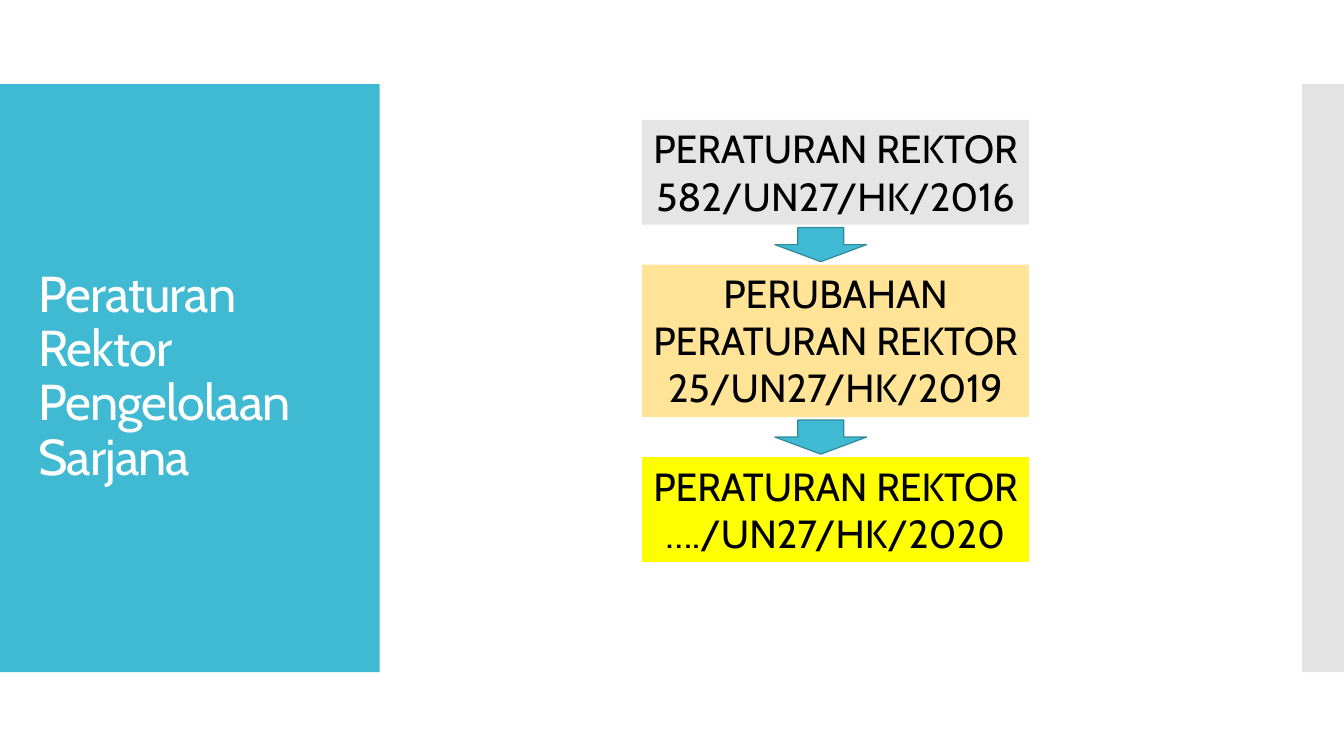
from pptx import Presentation
from pptx.dml.color import RGBColor
from pptx.enum.shapes import MSO_SHAPE
from pptx.enum.text import MSO_ANCHOR, PP_ALIGN
from pptx.util import Cm, Pt

RECT, ARROW = MSO_SHAPE.RECTANGLE, MSO_SHAPE.DOWN_ARROW
MIDDLE, TOP = MSO_ANCHOR.MIDDLE, MSO_ANCHOR.TOP
LEFT, CENTER = PP_ALIGN.LEFT, PP_ALIGN.CENTER

TITLE = "Peraturan Rektor Pengelolaan Sarjana"
RULES = [
    ("PERATURAN REKTOR 582/UN27/HK/2016", "E5E5E5", 2.64),
    ("PERUBAHAN PERATURAN REKTOR 25/UN27/HK/2019", "FFE497", 3.84),
    ("PERATURAN REKTOR …./UN27/HK/2020", "FFFF00", 2.64),
]
THEME = {
    "font": "Cabin", "title": 36, "body": 28,
    "teal": "40BAD2", "edge": "2F8A9B", "grey": "E3E3E3",
    "white": "FFFFFF", "black": "000000",
}
WIDE, HIGH = 33.87, 19.05
BAND_Y, BAND_H = 2.12, 14.82
PANEL_W, STRIP_W = 9.57, 1.06
BOX_X, BOX_Y, BOX_W, GAP = 16.18, 3.02, 9.75, 1.01
ARROW_X, ARROW_W, ARROW_H = 19.53, 2.31, 0.86


def draw(slide, kind, x, y, w, h, fill, edge=None):
    shape = slide.shapes.add_shape(kind, Cm(x), Cm(y), Cm(w), Cm(h))
    shape.shadow.inherit = False
    shape.fill.solid()
    shape.fill.fore_color.rgb = RGBColor.from_string(fill)
    if edge:
        shape.line.color.rgb = RGBColor.from_string(edge)
        shape.line.width = Pt(0.85)
    else:
        shape.line.fill.background()
    return shape


def write(shape, text, size, color, align=CENTER, anchor=TOP, lead=None, track=None):
    frame = shape.text_frame
    frame.word_wrap = True
    frame.vertical_anchor = anchor
    para = frame.paragraphs[0]
    para.alignment = align
    if lead:
        para.line_spacing = lead
    run = para.add_run()
    run.text = text
    font = run.font
    font.name = THEME["font"]
    font.size = Pt(size)
    font.color.rgb = RGBColor.from_string(color)
    if track:
        run._r.get_or_add_rPr().set("spc", str(track))


def main():
    deck = Presentation()
    deck.slide_width, deck.slide_height = Cm(WIDE), Cm(HIGH)
    slide = deck.slides.add_slide(deck.slide_layouts[6])

    draw(slide, RECT, 0, BAND_Y, PANEL_W, BAND_H, THEME["teal"])
    draw(slide, RECT, WIDE - STRIP_W, BAND_Y, STRIP_W, BAND_H, THEME["grey"])
    title = slide.shapes.add_textbox(Cm(0.71), Cm(3.12), Cm(8.18), Cm(12.78))
    write(title, TITLE, THEME["title"], THEME["white"],
          align=LEFT, anchor=MIDDLE, lead=0.9, track=-60)

    y = BOX_Y
    for place, (text, fill, high) in enumerate(RULES):
        if place:
            draw(slide, ARROW, ARROW_X, y - GAP + (GAP - ARROW_H) / 2,
                 ARROW_W, ARROW_H, THEME["teal"], THEME["edge"])
        box = draw(slide, RECT, BOX_X, y, BOX_W, high, fill)
        write(box, text, THEME["body"], THEME["black"])
        y += high + GAP

    deck.save("out.pptx")


if __name__ == "__main__":
    main()
